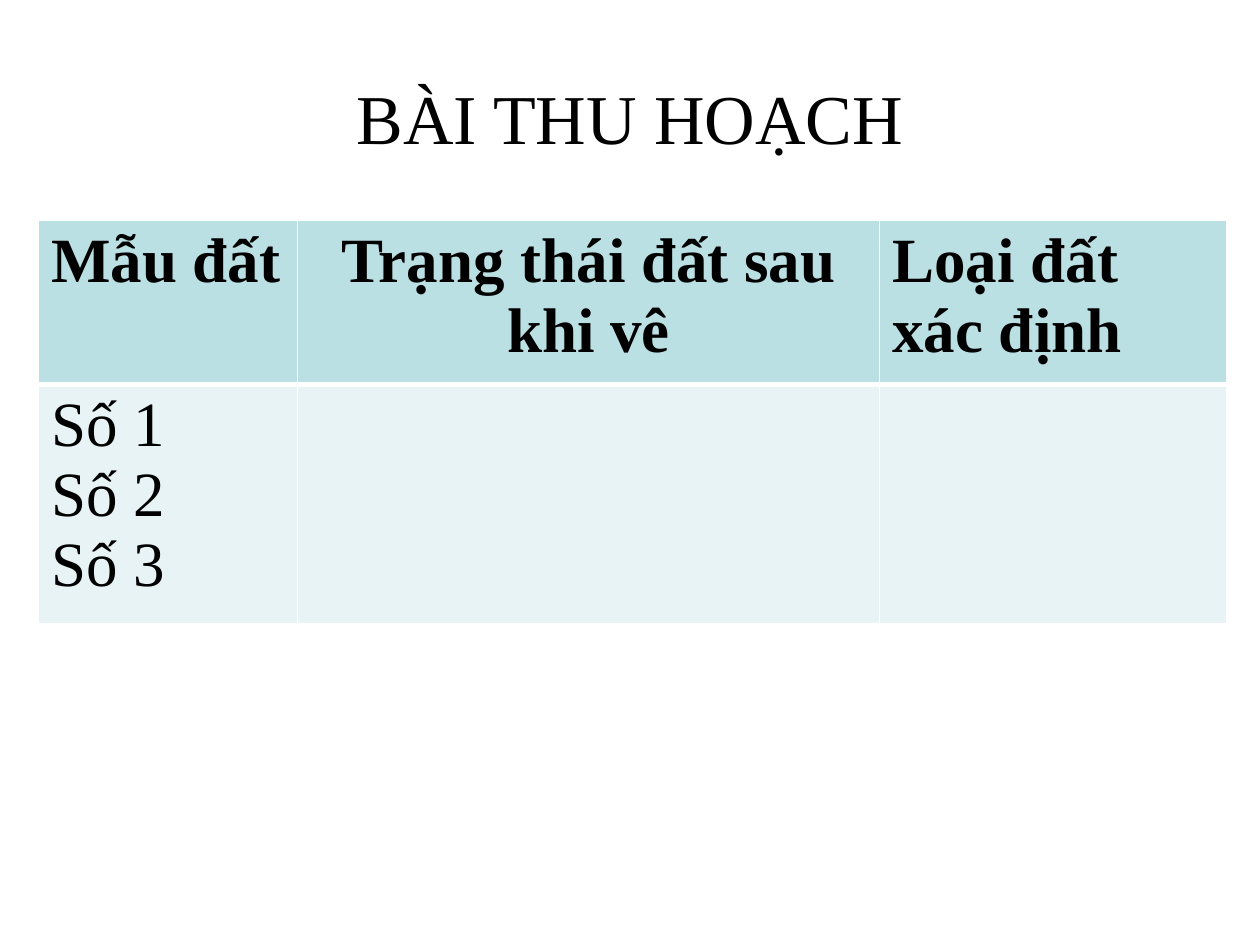
import pptx
import pptx.util
import pptx.dml.color
import pptx.enum.text
import pptx.oxml
import pptx.oxml.ns

Pt = pptx.util.Pt
ALIGN = pptx.enum.text.PP_ALIGN
COLORS = {"page": "FFFFFF", "ink": "000000", "head": "BBE0E3", "body": "E7F3F4"}
FONT = "Times New Roman"
HEADS = ["Mẫu đất", "Trạng thái đất sau khi vê", "Loại đất xác định"]
SOILS = ["Số 1", "Số 2", "Số 3"]


def shade(name):
    return pptx.dml.color.RGBColor.from_string(COLORS[name])


def assign(item, values):
    for key, value in values.items():
        setattr(item, key, value)


def write(frame, lines, align, size, bold=False):
    frame.word_wrap = True
    for index, line in enumerate(lines):
        para = frame.paragraphs[0] if index == 0 else frame.add_paragraph()
        para.alignment = align
        run = para.add_run()
        run.text = line
        assign(run.font, {"name": FONT, "size": Pt(size), "bold": bold})
        run.font.color.rgb = shade("ink")


def border(cell, widths):
    props = cell._tc.get_or_add_tcPr()
    for index, (side, width) in enumerate(widths.items()):
        line = pptx.oxml.parse_xml(
            f'<a:ln{side} {pptx.oxml.ns.nsdecls("a")} w="{Pt(width)}">'
            f'<a:solidFill><a:srgbClr val="{COLORS["page"]}"/></a:solidFill>'
            f'</a:ln{side}>'
        )
        props.insert(index, line)


def add_title(slide, box):
    shape = slide.shapes.add_textbox(*map(Pt, box))
    shape.text_frame.vertical_anchor = pptx.enum.text.MSO_ANCHOR.MIDDLE
    write(shape.text_frame, ["BÀI THU HOẠCH"], ALIGN.CENTER, 40)


def add_soils(slide, box):
    left, top, width, height = box
    table = slide.shapes.add_table(2, 3, *map(Pt, box)).table
    assign(table, {"first_row": False, "horz_banding": False})
    for column, share in zip(table.columns, (0.218, 0.49, 0.292)):
        column.width = Pt(round(width * share, 2))
    for row, share in zip(table.rows, (0.405, 0.595)):
        row.height = Pt(round(height * share, 2))
    rows = [[[head] for head in HEADS], [SOILS, [], []]]
    for r, row in enumerate(rows):
        for c, lines in enumerate(row):
            cell = table.cell(r, c)
            cell.fill.solid()
            cell.fill.fore_color.rgb = shade("body" if r else "head")
            border(cell, {"L": 1, "R": 1, "T": 3 if r else 1, "B": 1 if r else 3})
            align = ALIGN.CENTER if (r, c) == (0, 1) else ALIGN.LEFT
            write(cell.text_frame, lines, align, 36, r == 0)


def main():
    deck = pptx.Presentation()
    assign(deck, {"slide_width": Pt(720), "slide_height": Pt(540)})
    slide = deck.slides.add_slide(deck.slide_layouts[6])
    slide.background.fill.solid()
    slide.background.fill.fore_color.rgb = shade("page")
    add_title(slide, (36, 21.6, 648, 90))
    add_soils(slide, (22, 126, 679, 213))
    deck.save("out.pptx")


if __name__ == "__main__":
    main()
